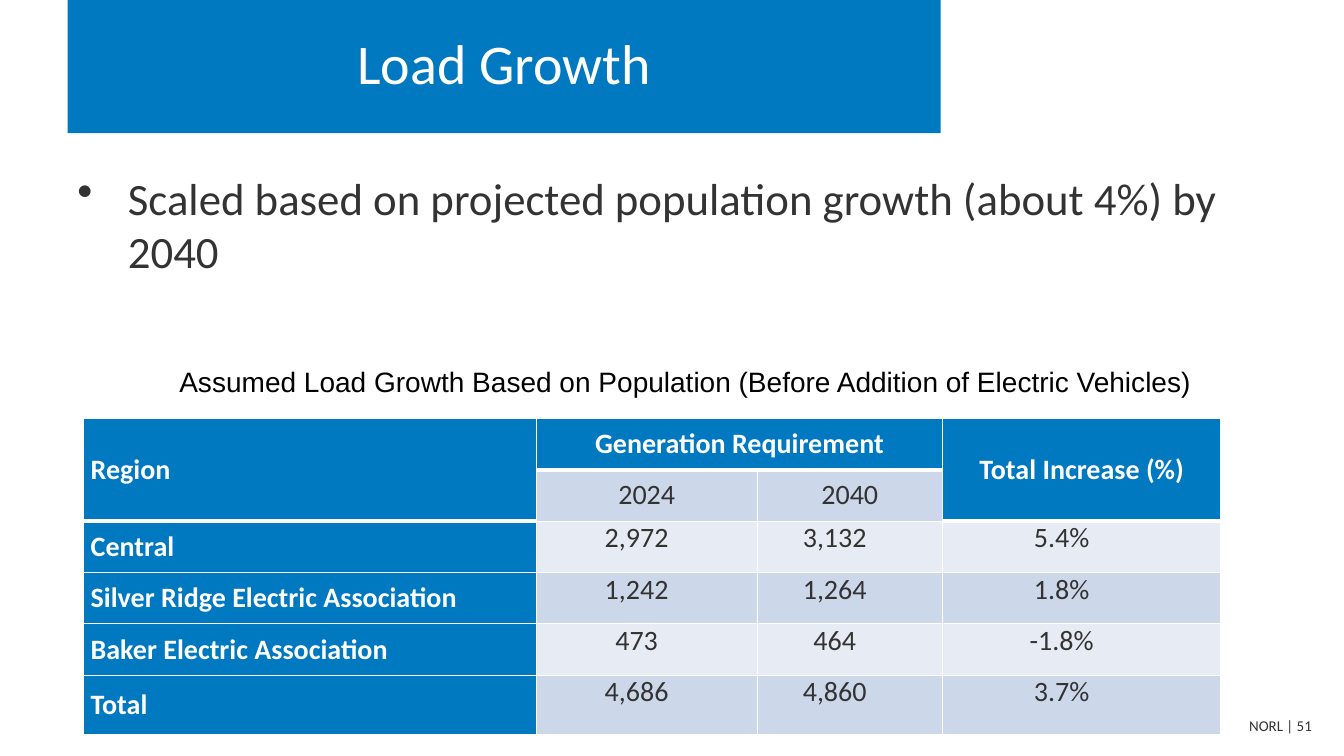
import pptx
import pptx.dml.color
import pptx.enum.text
import pptx.oxml
import pptx.oxml.ns
import pptx.util

PX = 9144  # EMU per px, 100 px to the inch
BLUE, WHITE, GREY = "0079C1", "FFFFFF", "333333"
BANDS = ["E7ECF4", "CCD7E9"]
ALIGN = pptx.enum.text.PP_ALIGN
ANCHOR = pptx.enum.text.MSO_ANCHOR

COLUMN_WIDTHS = [449, 219, 184, 276]
ROW_HEIGHTS = [51, 51, 51, 51, 51, 59]
VALUE_RIGHT_MARGINS = [27, 37, 47]
HEADER = [
    ["Region", "Generation Requirement", "", "Total Increase (%)"],
    ["", "2024", "2040", ""],
]
REGIONS = [
    ["Central", "2,972", "3,132", "5.4%"],
    ["Silver Ridge Electric Association", "1,242", "1,264", "1.8%"],
    ["Baker Electric Association", "473", "464", "-1.8%"],
    ["Total", "4,686", "4,860", "3.7%"],
]


def px(length):
    return pptx.util.Emu(length * PX)


def rgb(color):
    return pptx.dml.color.RGBColor.from_string(color)


def write(frame, text, size=20, font="Calibri", color=GREY, bold=False,
          align=ALIGN.LEFT, anchor=ANCHOR.TOP):
    frame.word_wrap = True
    frame.vertical_anchor = anchor
    para = frame.paragraphs[0]
    para.alignment = align
    span = para.add_run()
    span.text = text
    span.font.size = pptx.util.Pt(size)
    span.font.name = font
    span.font.bold = bold
    span.font.color.rgb = rgb(color)
    return para


def add_text(page, left, top, width, height, text, **text_format):
    box = page.shapes.add_textbox(px(left), px(top), px(width), px(height))
    return write(box.text_frame, text, **text_format)


def add_bullet(para, indent):
    properties = para._p.get_or_add_pPr()
    properties.set("marL", str(px(indent)))
    properties.set("indent", str(px(-indent)))
    bullet = pptx.oxml.parse_xml(
        f'<a:buChar {pptx.oxml.ns.nsdecls("a")} char="•"/>')
    properties.append(bullet)


def add_title(page, text):
    title = page.shapes.title
    title.left, title.top, title.width, title.height = map(px, (67, 0, 866, 132))
    title.fill.solid()
    title.fill.fore_color.rgb = rgb(BLUE)
    title.text_frame.auto_size = pptx.enum.text.MSO_AUTO_SIZE.NONE
    para = write(title.text_frame, text, size=40, color=WHITE,
                 align=ALIGN.CENTER, anchor=ANCHOR.MIDDLE)
    para.line_spacing = 0.9


def rule_below(row, column):
    """Width in points of the line under a cell; headings have a heavy one."""
    return 3 if row == 0 or (row == 1 and column in (0, 3)) else 1


def add_borders(cell, row, column):
    top = rule_below(row - 1, column) if row else 1
    widths = {"lnL": 1, "lnR": 1, "lnT": top, "lnB": rule_below(row, column)}
    properties = cell._tc.get_or_add_tcPr()
    for side, width in widths.items():
        properties.append(pptx.oxml.parse_xml(
            f'<a:{side} {pptx.oxml.ns.nsdecls("a")} w="{pptx.util.Pt(width)}">'
            f'<a:solidFill><a:srgbClr val="{WHITE}"/></a:solidFill></a:{side}>'))


def format_cell(cell, row, column, text):
    heading = row == 0 or column == 0 or (row == 1 and column == 3)
    add_borders(cell, row, column)
    cell.fill.solid()
    cell.fill.fore_color.rgb = rgb(BLUE if heading else BANDS[row % 2])
    cell.margin_left = cell.margin_right = px(7)
    cell.margin_top = cell.margin_bottom = 0
    is_value = row > 1 and column > 0
    if is_value:
        cell.margin_right = px(VALUE_RIGHT_MARGINS[column - 1])
    cell.vertical_anchor = ANCHOR.TOP if is_value else ANCHOR.MIDDLE
    if text:
        para = write_cell(cell, text, heading, column)
        para.space_before = para.space_after = pptx.util.Pt(3)


def write_cell(cell, text, heading, column):
    para = cell.text_frame.paragraphs[0]
    para.alignment = ALIGN.CENTER if column else ALIGN.LEFT
    span = para.add_run()
    span.text = text
    span.font.size = pptx.util.Pt(20)
    span.font.name = "Calibri"
    span.font.bold = heading
    span.font.color.rgb = rgb(WHITE if heading else GREY)
    return para


def add_growth_table(page):
    rows = HEADER + REGIONS
    table = page.shapes.add_table(
        len(rows), len(COLUMN_WIDTHS), px(83), px(415),
        px(sum(COLUMN_WIDTHS)), px(sum(ROW_HEIGHTS))).table
    for column, width in zip(table.columns, COLUMN_WIDTHS):
        column.width = px(width)
    for row, height in zip(table.rows, ROW_HEIGHTS):
        row.height = px(height)
    for row, texts in enumerate(rows):
        for column, text in enumerate(texts):
            format_cell(table.cell(row, column), row, column, text)
    for first, last in [((0, 0), (1, 0)), ((0, 1), (0, 2)), ((0, 3), (1, 3))]:
        table.cell(*first).merge(table.cell(*last))


def main():
    deck = pptx.Presentation()
    deck.slide_width, deck.slide_height = px(1333), px(750)
    page = deck.slides.add_slide(deck.slide_layouts[5])
    add_text(page, 979, 706, 332, 28, "NORL | 51", size=10.7, align=ALIGN.RIGHT)
    add_title(page, "Load Growth")
    growth = add_text(
        page, 67, 164, 1184, 528,
        "Scaled based on projected population growth (about 4%) by 2040", size=32)
    growth.space_before = pptx.util.Pt(6.4)
    add_bullet(growth, 50)
    add_growth_table(page)
    add_text(
        page, 168, 354, 1071, 48,
        "Assumed Load Growth Based on Population (Before Addition of Electric Vehicles)",
        font="Arial", color="000000", anchor=ANCHOR.MIDDLE)
    deck.save("out.pptx")


if __name__ == "__main__":
    main()
